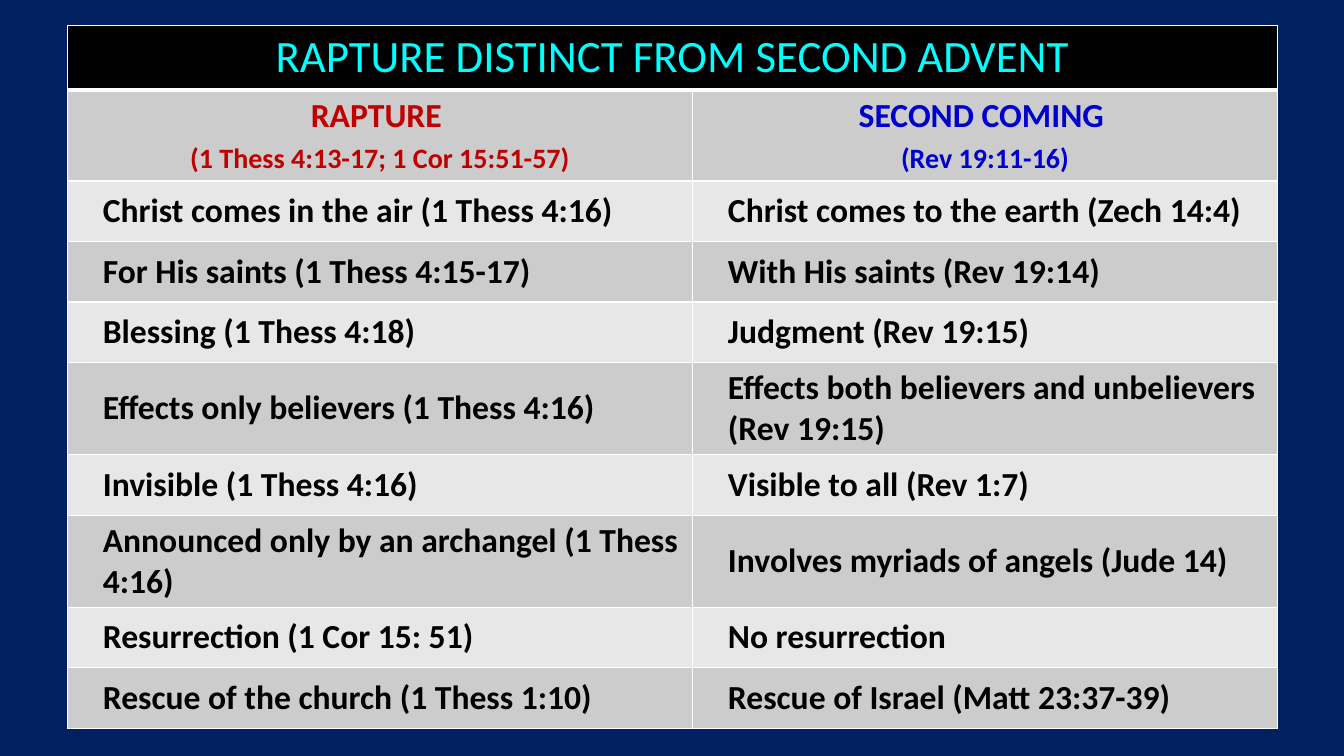
"""Build the slide that compares the Rapture with the Second Advent."""
import dataclasses

import lxml.etree
import pptx
import pptx.dml.color
import pptx.enum.text
import pptx.oxml.ns
import pptx.util


@dataclasses.dataclass(frozen=True)
class Theme:
    font: str = "Calibri"
    background: str = "002060"
    border: str = "FFFFFF"
    title_fill: str = "000000"
    title_text: str = "00FFFF"
    rapture: str = "C00000"
    second_coming: str = "0000CC"
    body_text: str = "000000"
    bands: tuple = ("CCCCCC", "E7E7E7")
    title_size: int = 32
    body_size: int = 24
    reference_size: int = 20
    thin: float = 1
    thick: float = 3


TITLE = "RAPTURE DISTINCT FROM SECOND ADVENT"
HEADINGS = [
    ("RAPTURE ", "(1 Thess 4:13-17; 1 Cor 15:51-57)"),
    ("SECOND COMING ", "(Rev 19:11-16)"),
]
CONTRASTS = [
    ("Christ comes in the air (1 Thess 4:16)", "Christ comes to the earth (Zech 14:4)"),
    ("For His saints (1 Thess 4:15-17)", "With His saints (Rev 19:14)"),
    ("Blessing (1 Thess 4:18)", "Judgment (Rev 19:15)"),
    ("Effects only believers (1 Thess 4:16)", "Effects both believers and unbelievers (Rev 19:15)"),
    ("Invisible (1 Thess 4:16)", "Visible to all (Rev 1:7)"),
    ("Announced only by an archangel (1 Thess 4:16)", "Involves myriads of angels (Jude 14)"),
    ("Resurrection (1 Cor 15: 51)", "No resurrection"),
    ("Rescue of the church (1 Thess 1:10)", "Rescue of Israel (Matt 23:37-39)"),
]
COLUMN_WIDTHS = [6.2, 5.8]
ROW_HEIGHTS = [0.63, 0.9, 0.6, 0.6, 0.6, 0.91, 0.6, 0.91, 0.6, 0.6]


class SlideBuilder:
    def __init__(self, presentation, theme):
        self.theme = theme
        self.slide = presentation.slides.add_slide(presentation.slide_layouts[6])
        self.paint(self.slide.background.fill, theme.background)

    def paint(self, fill, color):
        fill.solid()
        fill.fore_color.rgb = pptx.dml.color.RGBColor.from_string(color)

    def table(self, left, top, column_widths, row_heights):
        inches = pptx.util.Inches
        frame = self.slide.shapes.add_table(
            len(row_heights), len(column_widths), inches(left), inches(top),
            inches(sum(column_widths)), inches(sum(row_heights)))
        for column, width in zip(frame.table.columns, column_widths):
            column.width = inches(width)
        for row, height in zip(frame.table.rows, row_heights):
            row.height = inches(height)
        return frame.table

    def border(self, cell, side, width):
        qualified = pptx.oxml.ns.qn
        properties = cell._tc.get_or_add_tcPr()
        line = lxml.etree.SubElement(
            properties, qualified(f"a:ln{side}"), w=str(pptx.util.Pt(width)))
        fill = lxml.etree.SubElement(line, qualified("a:solidFill"))
        lxml.etree.SubElement(fill, qualified("a:srgbClr"), val=self.theme.border)

    def cell(self, cell, fill, top=None, bottom=None):
        thin = self.theme.thin
        widths = {"L": thin, "R": thin, "T": top or thin, "B": bottom or thin}
        for side, width in widths.items():
            self.border(cell, side, width)
        self.paint(cell.fill, fill)
        cell.vertical_anchor = pptx.enum.text.MSO_ANCHOR.MIDDLE

    def text(self, cell, lines, sizes, color, bold=True, centered=True):
        cell.text_frame.text = "\n".join(lines)
        for index, (paragraph, size) in enumerate(zip(cell.text_frame.paragraphs, sizes)):
            if centered:
                paragraph.alignment = pptx.enum.text.PP_ALIGN.CENTER
            else:
                paragraph._p.get_or_add_pPr().set("marL", str(pptx.util.Inches(0.25)))
            if index:
                paragraph.space_before = pptx.util.Pt(size * 0.2)
            for run in paragraph.runs:
                run.font.name = self.theme.font
                run.font.size = pptx.util.Pt(size)
                run.font.bold = bold
                run.font.color.rgb = pptx.dml.color.RGBColor.from_string(color)


def main():
    theme = Theme()
    presentation = pptx.Presentation()
    presentation.slide_width = pptx.util.Inches(13.33)
    presentation.slide_height = pptx.util.Inches(7.5)
    builder = SlideBuilder(presentation, theme)
    table = builder.table(0.67, 0.25, COLUMN_WIDTHS, ROW_HEIGHTS)

    title_cell = table.cell(0, 0)
    title_cell.merge(table.cell(0, 1))
    for column in range(len(COLUMN_WIDTHS)):
        builder.cell(table.cell(0, column), theme.title_fill, bottom=theme.thick)
    builder.text(title_cell, [TITLE], [theme.title_size], theme.title_text, bold=False)

    heading_colors = [theme.rapture, theme.second_coming]
    for column, (lines, color) in enumerate(zip(HEADINGS, heading_colors)):
        cell = table.cell(1, column)
        builder.cell(cell, theme.bands[0], top=theme.thick)
        builder.text(cell, lines, [theme.body_size, theme.reference_size], color)

    for row, contrast in enumerate(CONTRASTS, start=2):
        for column, statement in enumerate(contrast):
            cell = table.cell(row, column)
            builder.cell(cell, theme.bands[(row - 1) % 2])
            builder.text(cell, [statement], [theme.body_size], theme.body_text, centered=False)

    presentation.save("out.pptx")


if __name__ == "__main__":
    main()
